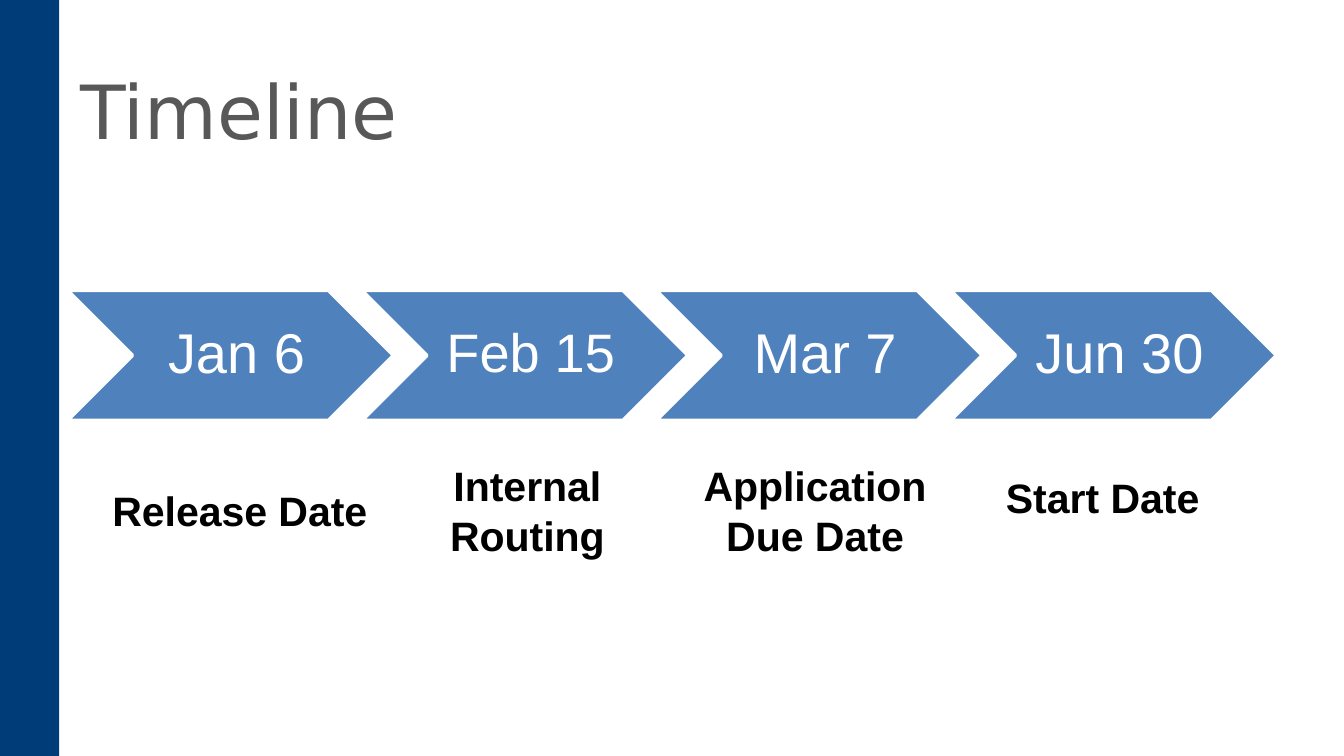
from dataclasses import dataclass

from pptx import Presentation
from pptx import util as u
from pptx.dml.color import RGBColor
from pptx.enum import shapes, text

NAVY = RGBColor(0x00, 0x3D, 0x78)
BLUE = RGBColor(0x4F, 0x81, 0xBD)
GRAY = RGBColor(0x58, 0x58, 0x58)
WHITE = RGBColor(0xFF, 0xFF, 0xFF)
BLACK = RGBColor(0x00, 0x00, 0x00)

PAGE_WIDTH = u.Inches(10)
PAGE_HEIGHT = PAGE_WIDTH * 9 // 16
SIDEBAR_WIDTH = u.Inches(0.44)
MARGIN = u.Inches(0.5)

CHEVRON_STEP = u.Inches(2.19)
CHEVRON_TOP = u.Inches(2.16)
CHEVRON_WIDTH, CHEVRON_HEIGHT = u.Inches(2.43), u.Inches(0.97)

LABEL_LEFT, LABEL_STEP = u.Inches(0.7), u.Inches(2.14)
LABEL_WIDTH, LABEL_LINE = u.Inches(2.17), u.Inches(0.37)


@dataclass(frozen=True)
class Milestone:
    date: str
    label: str
    label_top: float
    label_lines: int = 1
    date_size: int = 30


MILESTONES = (
    Milestone("Jan 6", "Release Date", 3.56),
    Milestone("Feb 15", "Internal Routing", 3.38, label_lines=2, date_size=29),
    Milestone("Mar 7", "Application Due Date", 3.38, label_lines=2),
    Milestone("Jun 30", "Start Date", 3.47),
)


def write(frame, words: str, font_name: str, size: int, color: RGBColor,
          align=text.PP_ALIGN.CENTER, bold: bool = False):
    frame.word_wrap = True
    para = frame.paragraphs[0]
    para.text = words
    para.alignment = align
    para.font.name = font_name
    para.font.size = u.Pt(size)
    para.font.bold = bold
    para.font.color.rgb = color
    return para


def add_sidebar(page) -> None:
    bar = page.shapes.add_shape(shapes.MSO_SHAPE.RECTANGLE, 0, 0, SIDEBAR_WIDTH, PAGE_HEIGHT)
    bar.shadow.inherit = False
    bar.fill.solid()
    bar.fill.fore_color.rgb = NAVY
    bar.line.fill.background()


def set_title(page, words: str) -> None:
    title = page.shapes.title
    title.left, title.top = MARGIN, u.Inches(0.43)
    title.width, title.height = PAGE_WIDTH - 2 * MARGIN, u.Inches(1.25)
    title.text_frame.vertical_anchor = text.MSO_ANCHOR.TOP
    title.text_frame.auto_size = text.MSO_AUTO_SIZE.NONE
    write(title.text_frame, words, "DejaVu Sans", 40, GRAY, text.PP_ALIGN.LEFT)


def add_chevron(page, column: int, milestone: Milestone) -> None:
    chevron = page.shapes.add_shape(
        shapes.MSO_SHAPE.CHEVRON, MARGIN + column * CHEVRON_STEP, CHEVRON_TOP,
        CHEVRON_WIDTH, CHEVRON_HEIGHT)
    chevron.shadow.inherit = False
    chevron.fill.solid()
    chevron.fill.fore_color.rgb = BLUE
    chevron.line.color.rgb = WHITE
    chevron.line.width = u.Pt(2)
    frame = chevron.text_frame
    frame.vertical_anchor = text.MSO_ANCHOR.MIDDLE
    frame.margin_left = u.Inches(0.13)
    frame.margin_top = frame.margin_right = frame.margin_bottom = u.Inches(0.04)
    para = write(frame, milestone.date, "Arial", milestone.date_size, WHITE)
    para.line_spacing = 0.9


def add_label(page, column: int, milestone: Milestone) -> None:
    box = page.shapes.add_textbox(
        LABEL_LEFT + column * LABEL_STEP, u.Inches(milestone.label_top),
        LABEL_WIDTH, u.Inches(0.1) + milestone.label_lines * LABEL_LINE)
    box.text_frame.auto_size = text.MSO_AUTO_SIZE.SHAPE_TO_FIT_TEXT
    write(box.text_frame, milestone.label, "Arial", 22, BLACK, bold=True)


def main() -> None:
    deck = Presentation()
    deck.slide_width, deck.slide_height = PAGE_WIDTH, PAGE_HEIGHT
    page = deck.slides.add_slide(deck.slide_layouts.get_by_name("Title Only"))
    add_sidebar(page)
    set_title(page, "Timeline")
    for column, milestone in enumerate(MILESTONES):
        add_chevron(page, column, milestone)
        add_label(page, column, milestone)
    deck.save("out.pptx")


if __name__ == "__main__":
    main()
